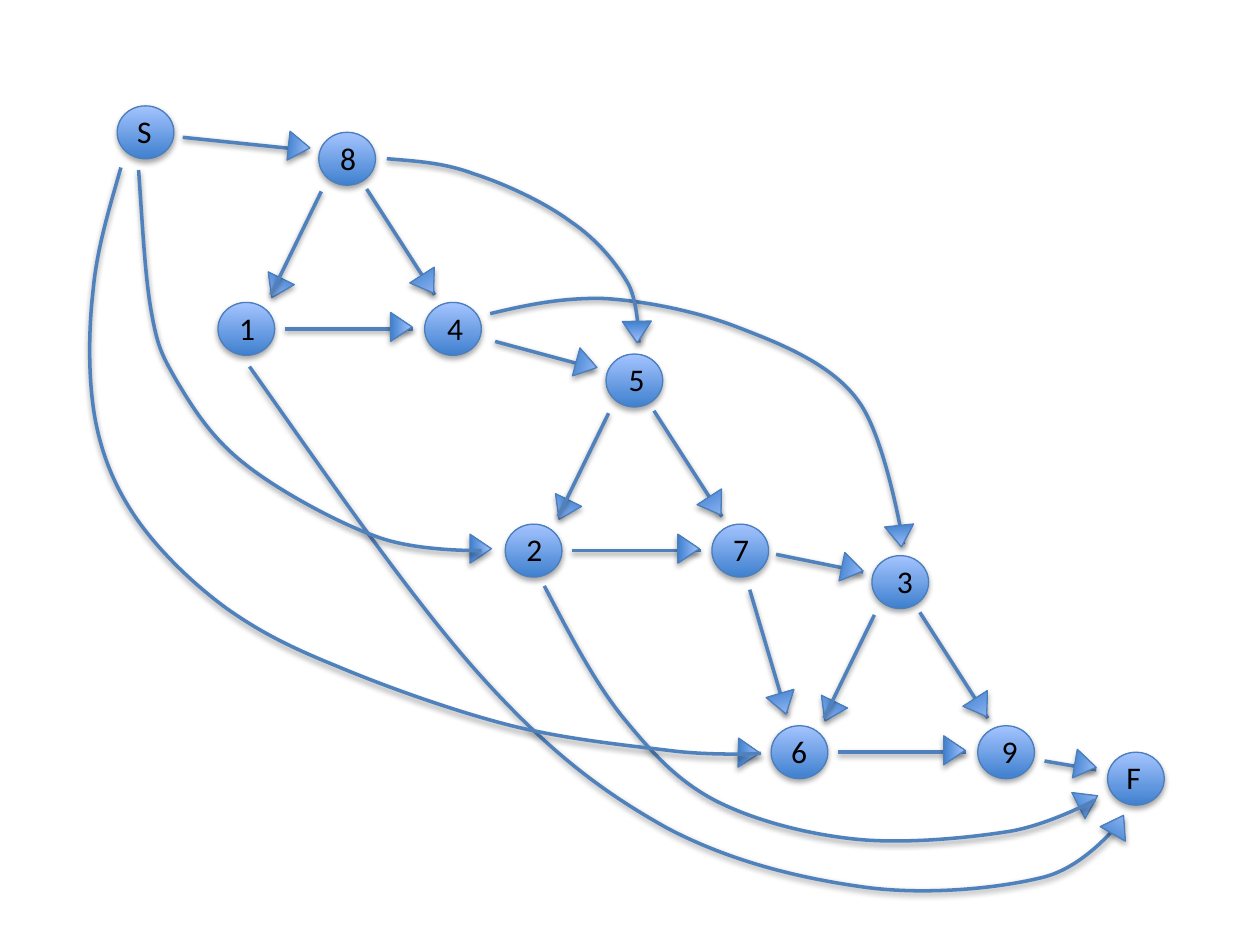
import dataclasses
import math

import lxml.etree
import pptx
import pptx.dml.color
import pptx.enum.shapes
import pptx.enum.text
import pptx.oxml.ns
import pptx.util

COLUMNS, ROWS = 100, 75
CELL = pptx.util.Inches(10) // COLUMNS
NODE_SIZE = (4.5, 4.2)
HEAD_SIZE = (2.3, 1.7)
SHAPES = pptx.enum.shapes.MSO_SHAPE
qn = pptx.oxml.ns.qn


@dataclasses.dataclass
class Region:
    """A part of the slide grid, known by its left column and top row."""
    left: float
    top: float

    def spot(self, column, row):
        """Return the slide position of a point inside the region."""
        return round((self.left + column) * CELL), round((self.top + row) * CELL)


def span(*cells):
    """Turn grid lengths into slide lengths."""
    return [round(cell * CELL) for cell in cells]


def color(hex_code):
    """Return the colour for a hex string."""
    return pptx.dml.color.RGBColor.from_string(hex_code)


def cast_shadow(item, alpha, distance):
    """Give an item a soft black shadow straight below it."""
    effects = item.element.spPr.find(qn("a:effectLst"))
    if effects is None:
        effects = lxml.etree.SubElement(item.element.spPr, qn("a:effectLst"))
    shadow = lxml.etree.SubElement(
        effects, qn("a:outerShdw"), blurRad="40000", dist=str(distance),
        dir="5400000", rotWithShape="0")
    black = lxml.etree.SubElement(shadow, qn("a:srgbClr"), val="000000")
    lxml.etree.SubElement(black, qn("a:alpha"), val=str(alpha * 1000))


def add_glossy(slide, preset, position, size, rotation=0):
    """Add a shape with the blue gradient, thin outline and shadow."""
    shape = slide.shapes.add_shape(preset, *position, *span(*size))
    shape.rotation = rotation
    shape.fill.gradient()
    shape.fill.gradient_angle = 90
    for stop, shade in zip(shape.fill.gradient_stops, ("3F80CE", "A4C4FF")):
        stop.color.rgb = color(shade)
    shape.line.color.rgb = color("4B7EBC")
    shape.line.width = pptx.util.Pt(0.75)
    cast_shadow(shape, 35, 23000)


def add_text(slide, text, position, size, font="Calibri", points=18, ink="000000"):
    """Add a text box with one formatted line."""
    frame = slide.shapes.add_textbox(*position, *span(*size)).text_frame
    frame.word_wrap = True
    frame.auto_size = pptx.enum.text.MSO_AUTO_SIZE.SHAPE_TO_FIT_TEXT
    run = frame.paragraphs[0].add_run()
    run.text = text
    run.font.name = font
    run.font.size = pptx.util.Pt(points)
    run.font.color.rgb = color(ink)


def add_node(slide, region, corner, name, indent=0.7, width=4.5):
    """Add a round node with its label."""
    column, row = corner
    add_glossy(slide, SHAPES.OVAL, region.spot(column, row), NODE_SIZE)
    add_text(slide, name, region.spot(column + indent, row), (width, 4.2))


def finish_line(line):
    """Style the line of an edge."""
    line.line.color.rgb = color("4F81BD")
    line.line.width = pptx.util.Pt(2)
    cast_shadow(line, 38, 20000)


def add_head(slide, region, corner, angle):
    """Add a triangular arrowhead turned to the given angle."""
    add_glossy(slide, SHAPES.ISOSCELES_TRIANGLE, region.spot(*corner), HEAD_SIZE, angle)


def add_straight_edge(slide, region, start, end, head, line_on_top=False):
    """Add a straight edge whose head follows its direction."""
    angle = math.degrees(math.atan2(end[0] - start[0], start[1] - end[1])) % 360
    if line_on_top:
        add_head(slide, region, head, angle)
    finish_line(slide.shapes.add_connector(
        pptx.enum.shapes.MSO_CONNECTOR.STRAIGHT, *region.spot(*start), *region.spot(*end)))
    if not line_on_top:
        add_head(slide, region, head, angle)


def add_curve(slide, region, points):
    """Add a smooth line through a start point and triples of curve points."""
    builder = slide.shapes.build_freeform(*region.spot(*points[0]))
    builder.add_line_segments([region.spot(*point) for point in points[1:]], close=False)
    curve = builder.convert_to_shape()
    curve.fill.background()
    outline = curve.element.spPr.find(".//" + qn("a:path"))
    steps = outline.findall(qn("a:lnTo"))
    for first in range(0, len(steps), 3):
        bend = lxml.etree.SubElement(outline, qn("a:cubicBezTo"))
        for step in steps[first:first + 3]:
            bend.append(step[0])
            outline.remove(step)
    finish_line(curve)


def add_curved_edge(slide, region, points, head, angle, line_on_top=False):
    """Add a curved edge with its head below or above the line."""
    if line_on_top:
        add_head(slide, region, head, angle)
    add_curve(slide, region, points)
    if not line_on_top:
        add_head(slide, region, head, angle)


def draw_triad(slide, region, apex, left, right):
    """Draw three nodes: an apex that leads to left and right, and left to right."""
    for corner, label in (((8, 0), apex), ((0, 13.5), left), ((16.4, 13.5), right)):
        add_node(slide, region, corner, *label)
    add_straight_edge(slide, region, (8.2, 4.7), (4.2, 12.9), (3.5, 11.5), True)
    add_straight_edge(slide, region, (11.8, 4.5), (17.2, 12.9), (15.5, 11.2))
    add_straight_edge(slide, region, (5.3, 15.6), (15.5, 15.6), (13.4, 14.6))


def draw_links(slide, region):
    """Draw the edges that join the triads, the start and the finish."""
    for start, end, head in (
        ((14.5, 10.9), (24.2, 11.9), (22.6, 10.8)),
        ((39.3, 27.1), (47.1, 29.2), (45.4, 28.1)),
        ((61.6, 44), (68.5, 45.4), (66.5, 44.3)),
        ((59.5, 46.8), (62.4, 56.6), (61, 55)),
        ((82.9, 60.4), (87, 61.1), (85, 59.9)),
    ):
        add_straight_edge(slide, region, start, end, head)

    one_to_finish = [
        (19.8, 29.1), (26.3, 38.3), (32.7, 47.6), (38.2, 53.7),
        (43.7, 59.8), (47.9, 62.9), (52.9, 65.7), (58, 68.4), (63.5, 69.7), (68.5, 70.4),
        (73.5, 71.1), (79.4, 70.5), (82.9, 69.6), (86.3, 68.7), (89, 65.1), (89, 65.1)]
    four_to_three = [
        (38.9, 24.9), (41.8, 24.2), (44.7, 23.6), (48, 23.7),
        (51.2, 23.9), (55.3, 24.7), (58.6, 26), (62, 27.3), (66, 28.9), (68.1, 31.8),
        (70.3, 34.7), (71.7, 43.2), (71.7, 43.2)]
    eight_to_five = [
        (30.7, 12.6), (33, 12.8), (35.2, 12.9), (37.6, 13.8),
        (40.1, 14.6), (43.3, 16.1), (45.3, 17.6), (47.4, 19), (49, 21), (49.9, 22.6),
        (50.7, 24.2), (50.7, 27.2), (50.7, 27.2)]
    two_to_finish = [
        (43.2, 46.5), (45.2, 50.3), (47.2, 54.2), (49.5, 57),
        (51.8, 59.8), (53.7, 61.9), (56.7, 63.5), (59.8, 65.1), (64, 66.2), (67.9, 66.6),
        (71.8, 67), (76.8, 66.5), (80, 66), (83.2, 65.5), (86.9, 63.5), (86.9, 63.5)]
    start_to_two = [
        (11, 13.5), (11.3, 17.7), (11.5, 21.9), (12, 24.7),
        (12.5, 27.5), (12.8, 28.1), (14, 30.2), (15.2, 32.2), (16.7, 34.7), (19.4, 36.8),
        (22, 38.9), (26.8, 41.5), (29.9, 42.6), (33.1, 43.8), (38.2, 43.7), (38.2, 43.7)]
    start_to_six = [
        (9.6, 13.3), (8.7, 16.5), (7.7, 19.7), (7.4, 23),
        (7, 26.4), (7, 30.4), (7.6, 33.5), (8.2, 36.5), (9.3, 39), (11, 41.4),
        (12.8, 43.9), (15.4, 46.4), (18, 48.3), (20.7, 50.2), (23.1, 51.4), (26.8, 52.9),
        (30.6, 54.5), (36.2, 56.5), (40.6, 57.6), (45, 58.7), (50.1, 59.2), (53.4, 59.6),
        (56.7, 60), (60.4, 59.8), (60.4, 59.8)]
    add_curved_edge(slide, region, one_to_finish, (87.6, 64.6), 30)
    add_curved_edge(slide, region, four_to_three, (70.3, 41.7), 174)
    add_curved_edge(slide, region, two_to_finish, (85.2, 62.7), 63, True)
    add_curved_edge(slide, region, start_to_two, (37, 42.7), 90, True)
    add_curved_edge(slide, region, start_to_six, (58.3, 58.9), 91, True)
    add_curved_edge(slide, region, eight_to_five, (49.4, 25.5), 179)


def main():
    """Build the slide with its graph of eleven nodes."""
    deck = pptx.Presentation()
    deck.slide_width, deck.slide_height = span(COLUMNS, ROWS)
    slide = deck.slides.add_slide(deck.slide_layouts[6])
    whole = Region(0, 0)
    add_node(slide, whole, (9.3, 8.4), "S", 0.6, 10.4)
    add_node(slide, whole, (87.9, 59.7), "F", 0.5, 8.9)
    draw_triad(slide, Region(17.3, 10.5), ("8", 0.7, 8.2), ("1", 0.7, 5.2), ("4", 0.8, 4))
    draw_triad(slide, Region(40.1, 28.1), ("5", 0.8, 5), ("2", 0.7, 4.2), ("7", 0.7, 4.7))
    draw_triad(slide, Region(61.2, 44.1), ("3", 1, 5), ("6", 0.6, 4.5), ("9", 0.9, 4.5))
    draw_links(slide, whole)
    deck.save("out.pptx")


if __name__ == "__main__":
    main()
